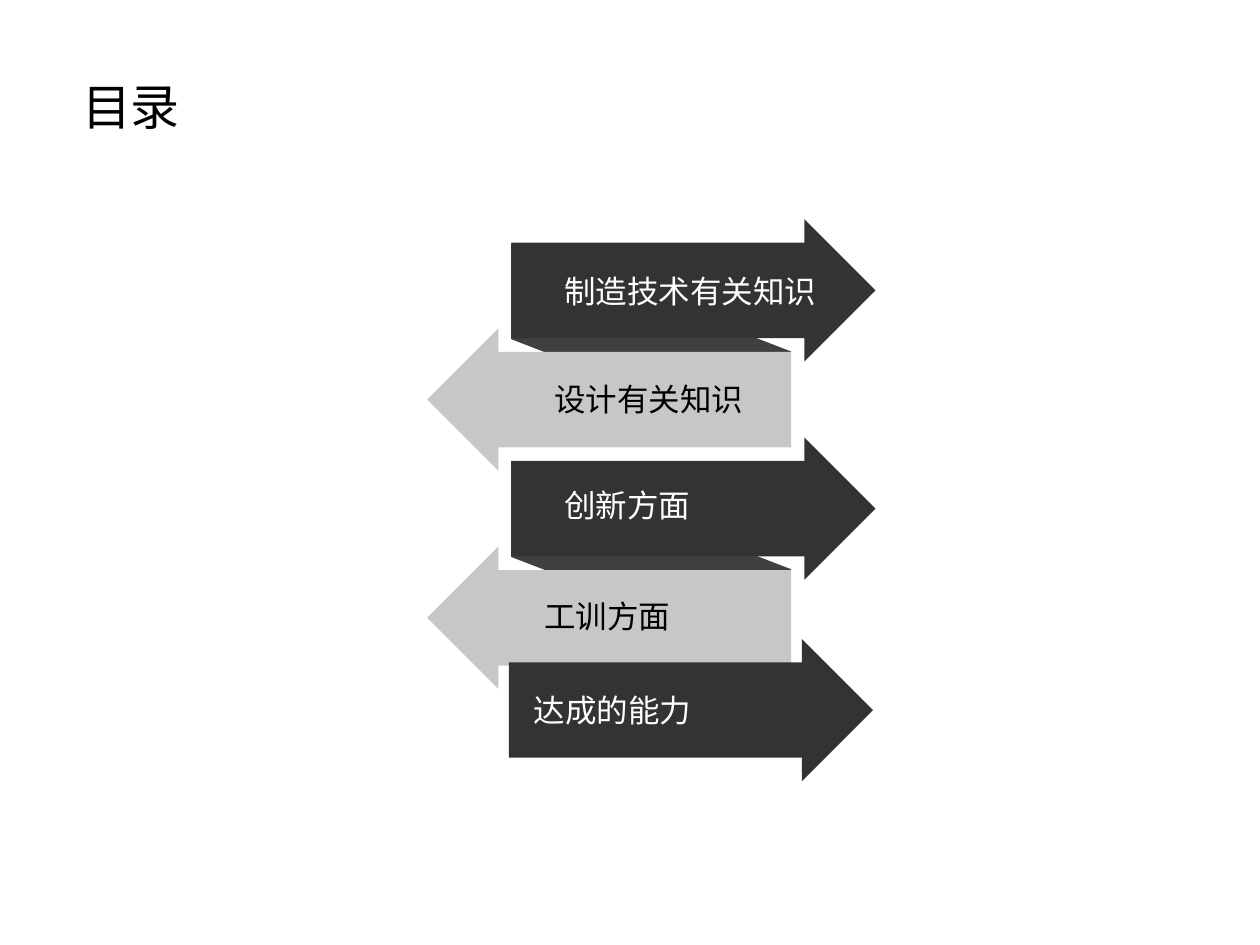
from lxml import etree
from pptx import Presentation
from pptx.dml.color import RGBColor
from pptx.enum.shapes import MSO_SHAPE
from pptx.enum.text import MSO_ANCHOR, PP_ALIGN
from pptx.oxml.ns import qn
from pptx.util import Cm, Pt

ARROW = MSO_SHAPE.RIGHT_ARROW
FOLD = MSO_SHAPE.PARALLELOGRAM
MIDDLE = MSO_ANCHOR.MIDDLE
LEFT = PP_ALIGN.LEFT

FONT = "Noto Sans CJK SC"
COLORS = {
    "dark": "333333",
    "light": "C7C7C7",
    "fold": "404040",
    "black": "000000",
    "white": "FFFFFF",
}


def add_block(kind, left, top, width, height, color, adjustments, rotation):
    shape = slide.shapes.add_shape(kind, Cm(left), Cm(top), Cm(width), Cm(height))
    shape.rotation = rotation
    shape.shadow.inherit = False
    shape.fill.solid()
    shape.fill.fore_color.rgb = RGBColor.from_string(COLORS[color])
    shape.line.fill.background()
    for index, value in enumerate(adjustments):
        shape.adjustments[index] = value
    return shape


def write_text(shape, text, size, color, **frame_format):
    frame = shape.text_frame
    for name, value in frame_format.items():
        setattr(frame, name, value)
    paragraph = frame.paragraphs[0]
    paragraph.alignment = LEFT
    run = paragraph.add_run()
    run.text = text
    font_format = {"name": FONT, "size": Pt(size), "bold": False}
    for name, value in font_format.items():
        setattr(run.font, name, value)
    run.font.color.rgb = RGBColor.from_string(COLORS[color])
    east_asian = etree.SubElement(run.font._element, qn("a:ea"))
    east_asian.set("typeface", FONT)


presentation = Presentation()
presentation.slide_width = Cm(25.4)
presentation.slide_height = Cm(19.05)
slide = presentation.slides.add_slide(presentation.slide_layouts[5])

title = slide.shapes.title
title_place = {"left": 1.4, "top": 1.4, "width": 2.77, "height": 1.45}
for name, value in title_place.items():
    setattr(title, name, Cm(value))
write_text(title, "目录", 28, "black", vertical_anchor=MIDDLE)

for top in (8.53, 4.14):
    add_block(FOLD, 11.07, top, 4.11, 5.64, "fold", [0.53], 270)

entries = [
    ("制造技术有关知识", 11.13, 5.36, 5.64),
    ("设计有关知识", 10.92, 7.54, 4.37),
    ("创新方面", 11.13, 9.68, 3.07),
    ("工训方面", 10.72, 11.91, 3.07),
]
for index, (text, left, top, width) in enumerate(entries):
    points_right = index % 2 == 0
    arrow_left, fill, text_color, rotation = (
        (10.31, "dark", "white", 0) if points_right else (8.61, "light", "black", 180)
    )
    add_block(ARROW, arrow_left, 4.42 + 2.2 * index, 7.34, 2.87, fill, [0.67, 0.5], rotation)
    label = slide.shapes.add_textbox(Cm(left), Cm(top), Cm(width), Cm(1.02))
    write_text(label, text, 18, text_color, word_wrap=False)

last_arrow = add_block(ARROW, 10.26, 12.88, 7.34, 2.87, "dark", [0.67, 0.5], 0)
write_text(last_arrow, "达成的能力", 18, "white", vertical_anchor=MIDDLE, margin_left=Cm(0.5))

presentation.save("out.pptx")
